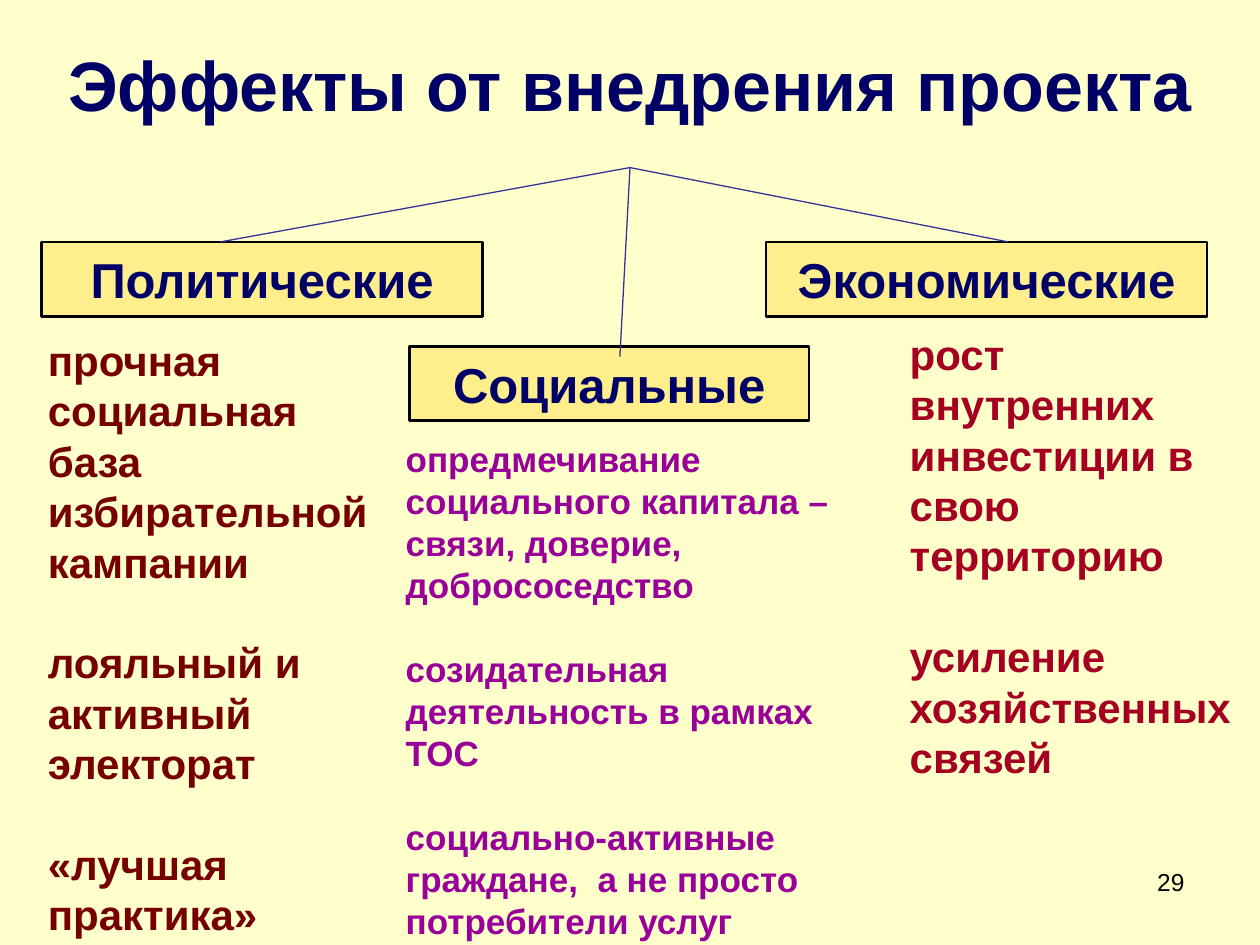
from dataclasses import dataclass

from lxml.etree import SubElement
from pptx import Presentation
from pptx.dml.color import RGBColor as Rgb
from pptx.enum.shapes import MSO_CONNECTOR as Link, MSO_SHAPE as Form
from pptx.enum.text import MSO_ANCHOR as Anchor, MSO_AUTO_SIZE as Fit, PP_ALIGN as Align
from pptx.oxml.ns import qn
from pptx.util import Inches, Pt


@dataclass(frozen=True)
class Theme:
    font: str = "Arial"
    back: str = "FFFFCC"
    navy: str = "000066"
    gold: str = "FFCC00"
    black: str = "000000"
    line: str = "333399"
    alpha: int = 31
    title: int = 40
    head: int = 28
    body: int = 24
    small: int = 20
    page: int = 14


@dataclass(frozen=True)
class Area:
    left: float
    top: float
    width: float
    height: float

    def emu(self) -> list:
        return [Inches(n) for n in (self.left, self.top, self.width, self.height)]


@dataclass(frozen=True)
class Group:
    head: str
    box: Area
    tip: tuple
    area: Area
    color: str
    size: int
    items: tuple


THEME = Theme()
ROOT = (5, 1.33)
LEAD = 1.2  # line pitch as a share of the type size
GROUPS = (
    Group("Политические", Area(0.33, 1.92, 3.5, 0.59), (1.75, 1.92),
          Area(0.08, 2.61, 3, 4.89), "760000", THEME.body,
          ("прочная социальная база избирательной кампании",
           "лояльный и активный электорат",
           "«лучшая практика»")),
    Group("Социальные", Area(3.25, 2.75, 3.17, 0.59), (4.92, 2.83),
          Area(2.92, 3.42, 4.17, 4.1), "990099", THEME.small,
          ("опредмечивание социального капитала – связи, доверие, добрососедство",
           "созидательная деятельность в рамках ТОС",
           "социально-активные граждане,  а не просто потребители услуг")),
    Group("Экономические", Area(6.08, 1.92, 3.5, 0.59), (8, 1.92),
          Area(6.92, 2.56, 3, 3.69), "A50021", THEME.body,
          ("рост внутренних инвестиции в свою территорию",
           "усиление хозяйственных связей")),
)


def write(shape, *items: str, size: int, color: str, bold: bool = True,
          align=Align.CENTER, anchor=Anchor.MIDDLE, listed: bool = False) -> None:
    """Fill a shape with one paragraph per item."""
    frame = shape.text_frame
    frame.word_wrap = True
    frame.auto_size = Fit.NONE
    frame.vertical_anchor = anchor
    for i, item in enumerate(items):
        para = frame.paragraphs[0] if i == 0 else frame.add_paragraph()
        para.alignment = align
        para.space_before = Pt(LEAD * size if i else 0)
        if listed:
            para.line_spacing = Pt(LEAD * size)
            props = para._p.get_or_add_pPr()
            props.set("marL", str(Inches(0.2)))
            props.set("indent", "0")
            SubElement(props, qn("a:buNone"))
        run = para.add_run()
        run.text = item
        font = run.font
        font.name, font.size, font.bold = THEME.font, Pt(size), bold
        font.color.rgb = Rgb.from_string(color)


def place(shape, area: Area) -> None:
    shape.left, shape.top, shape.width, shape.height = area.emu()


def add_head(slide, group: Group) -> None:
    box = slide.shapes.add_shape(Form.RECTANGLE, *group.box.emu())
    box.shadow.inherit = False
    box.fill.solid()
    box.fill.fore_color.rgb = Rgb.from_string(THEME.gold)
    tint = box._element.spPr.find(qn("a:solidFill"))[0]
    SubElement(tint, qn("a:alpha"), val=str(THEME.alpha * 1000))
    box.line.color.rgb = Rgb.from_string(THEME.black)
    box.line.width = Pt(1.5)
    write(box, group.head, size=THEME.head, color=THEME.navy)


def add_link(slide, tip: tuple) -> None:
    ends = [Inches(n) for n in (*ROOT, *tip)]
    link = slide.shapes.add_connector(Link.STRAIGHT, *ends)
    link.line.color.rgb = Rgb.from_string(THEME.line)
    link.line.width = Pt(0.75)
    SubElement(link._element.spPr, qn("a:effectLst"))


def main() -> None:
    deck = Presentation()
    deck.slide_width, deck.slide_height = Inches(10), Inches(7.5)
    slide = deck.slides.add_slide(deck.slide_layouts.get_by_name("Comparison"))
    slide.background.fill.solid()
    slide.background.fill.fore_color.rgb = Rgb.from_string(THEME.back)

    # Title
    title, *bodies = list(slide.placeholders)
    place(title, Area(0, 0.25, 10, 0.83))
    write(title, "Эффекты от внедрения проекта", size=THEME.title, color=THEME.navy)

    # Headed lists
    for group, body in zip(GROUPS, bodies):
        add_head(slide, group)
        place(body, group.area)
        write(body, *group.items, size=group.size, color=group.color,
              align=Align.LEFT, listed=True)
    for spare in bodies[len(GROUPS):]:
        spare._element.getparent().remove(spare._element)

    # Branches from the title to the heads
    for group in GROUPS:
        add_link(slide, group.tip)

    # Page number
    page = slide.shapes.add_textbox(*Area(7.17, 6.83, 2.33, 0.52).emu())
    write(page, "29", size=THEME.page, color=THEME.black, bold=False,
          align=Align.RIGHT, anchor=Anchor.TOP)

    deck.save("out.pptx")


if __name__ == "__main__":
    main()
